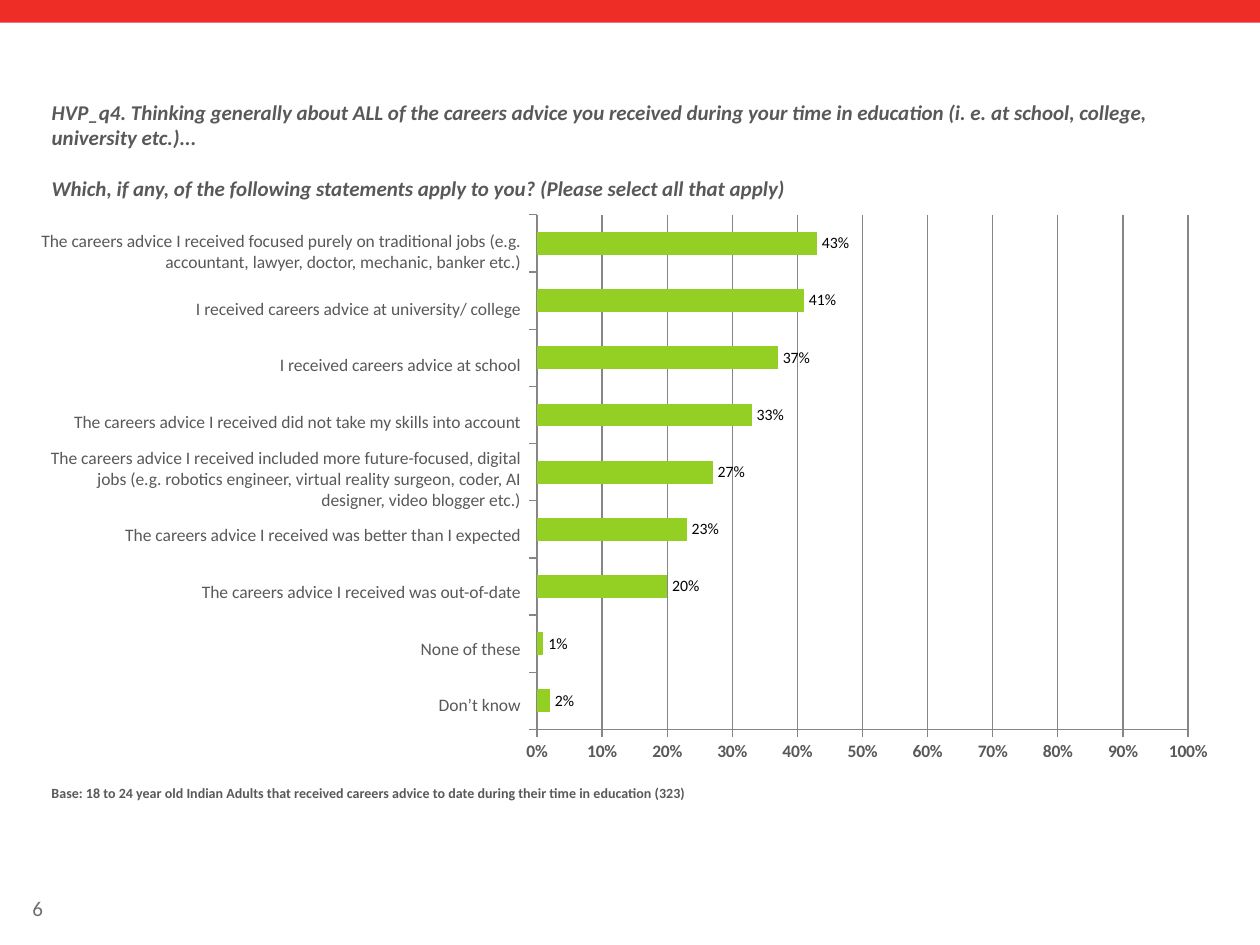
"""Build the careers advice survey slide with its bar chart."""
import pptx
import pptx.chart.data
import pptx.dml.color
import pptx.enum.chart
import pptx.enum.shapes
import pptx.enum.text
import pptx.oxml
import pptx.oxml.ns
import pptx.util

Inches, Pt = pptx.util.Inches, pptx.util.Pt
RGBColor = pptx.dml.color.RGBColor
Anchor = pptx.enum.text.MSO_ANCHOR
Align = pptx.enum.text.PP_ALIGN
Tick = pptx.enum.chart.XL_TICK_MARK
TickLabel = pptx.enum.chart.XL_TICK_LABEL_POSITION

RED = RGBColor(0xEE, 0x2D, 0x27)
GREEN = RGBColor(0x93, 0xD0, 0x23)
DARK = RGBColor(0x59, 0x59, 0x59)
GREY = RGBColor(0x6D, 0x6F, 0x71)
LINE = RGBColor(0x86, 0x86, 0x86)
BLACK = RGBColor(0, 0, 0)
FONT = "Calibri"

QUESTION = [
    "HVP_q4. Thinking generally about ALL of the careers advice you received during your "
    "time in education (i. e. at school, college, university etc.)...",
    "Which, if any, of the following statements apply to you? (Please select all that apply)",
]
ANSWERS = [
    ("The careers advice I received focused purely on traditional jobs "
     "(e.g. accountant, lawyer, doctor, mechanic, banker etc.)", 0.43),
    ("I received careers advice at university/ college", 0.41),
    ("I received careers advice at school", 0.37),
    ("The careers advice I received did not take my skills into account", 0.33),
    ("The careers advice I received included more future-focused, digital jobs "
     "(e.g. robotics engineer, virtual reality surgeon, coder, AI designer, "
     "video blogger etc.)", 0.27),
    ("The careers advice I received was better than I expected", 0.23),
    ("The careers advice I received was out-of-date", 0.20),
    ("None of these", 0.01),
    ("Don’t know", 0.02),
]
BASE = ("Base: 18 to 24 year old Indian Adults that received careers advice to date "
        "during their time in education (323)")
PAGE = "6"

LABEL_TOP, LABEL_STEP = 1.77, 0.45
PLOT = {"x": 0.034, "y": 0.021, "w": 0.918, "h": 0.902}


def style(font, size, color=DARK, bold=False, italic=False):
    font.name, font.size, font.bold, font.italic = FONT, Pt(size), bold, italic
    font.color.rgb = color


def fill_text(sp, lines, size, color=DARK, bold=False, italic=False,
              align=Align.LEFT, anchor=Anchor.TOP):
    tf = sp.text_frame
    tf.word_wrap = True
    tf.auto_size = pptx.enum.text.MSO_AUTO_SIZE.NONE
    tf.vertical_anchor = anchor
    tf.text = "\n".join(lines)
    for p in tf.paragraphs:
        p.alignment = align
        for r in p.runs:
            style(r.font, size, color, bold, italic)
    return tf


def add_text(s, box, text, size, **look):
    sp = s.shapes.add_textbox(*map(Inches, box))
    fill_text(sp, [text], size, **look)


def add_bar_chart(s):
    data = pptx.chart.data.CategoryChartData(number_format="0%")
    data.categories = [str(i + 1) for i in range(len(ANSWERS))]
    data.add_series("Series 1", [value for _, value in reversed(ANSWERS)])
    chart = s.shapes.add_chart(
        pptx.enum.chart.XL_CHART_TYPE.BAR_CLUSTERED,
        Inches(4.07), Inches(1.61), Inches(5.63), Inches(4.53), data).chart
    chart.has_legend = chart.has_title = False
    style(chart.font, 10)

    cat, val = chart.category_axis, chart.value_axis
    cat.tick_label_position = TickLabel.NONE
    val.tick_label_position = TickLabel.LOW
    val.minimum_scale, val.maximum_scale, val.major_unit = 0, 1, 0.1
    val.tick_labels.number_format = "0%"
    val.tick_labels.number_format_is_linked = False
    style(val.tick_labels.font, 10, bold=True)
    val.has_major_gridlines = True
    cat.has_major_gridlines = False
    for axis in (cat, val):
        axis.major_tick_mark, axis.minor_tick_mark = Tick.OUTSIDE, Tick.NONE
    for part in (cat, val, val.major_gridlines):
        part.format.line.color.rgb = LINE
        part.format.line.width = Pt(0.75)

    plot = chart.plots[0]
    plot.gap_width, plot.overlap, plot.vary_by_categories = 150, -10, False
    bars = plot.series[0]
    bars.format.fill.solid()
    bars.format.fill.fore_color.rgb = GREEN
    labels = bars.data_labels
    labels.show_value = True
    labels.number_format, labels.number_format_is_linked = "0%", False
    labels.position = pptx.enum.chart.XL_LABEL_POSITION.OUTSIDE_END
    style(labels.font, 9, BLACK)
    set_plot_area(chart)


def set_plot_area(chart):
    qn = pptx.oxml.ns.qn
    area = chart.plots[0]._element.getparent()
    for old in area.findall(qn("c:layout")):
        area.remove(old)
    modes = "".join(f'<c:{k}Mode val="edge"/>' for k in "xy")
    sizes = "".join(f'<c:{k} val="{v}"/>' for k, v in PLOT.items())
    area.insert(0, pptx.oxml.parse_xml(
        f'<c:layout {pptx.oxml.ns.nsdecls("c")}><c:manualLayout>'
        f'<c:layoutTarget val="inner"/>{modes}{sizes}</c:manualLayout></c:layout>'))


def main():
    prs = pptx.Presentation()
    prs.slide_width, prs.slide_height = Inches(10), Inches(7.5)
    s = prs.slides.add_slide(prs.slide_layouts[5])

    band = s.shapes.add_shape(pptx.enum.shapes.MSO_SHAPE.RECTANGLE,
                              0, 0, prs.slide_width, Inches(0.18))
    band.shadow.inherit = False
    band.fill.solid()
    band.fill.fore_color.rgb = RED
    band.line.fill.background()

    title = s.shapes.title
    title.left, title.top = Inches(0.31), Inches(0.74)
    title.width, title.height = Inches(9.39), Inches(0.88)
    tf = fill_text(title, QUESTION, 12, bold=True, italic=True)
    tf.paragraphs[1].space_before = Pt(14.4)

    add_bar_chart(s)
    for i, (label, _) in enumerate(ANSWERS):
        add_text(s, (0.16, LABEL_TOP + i * LABEL_STEP, 4.07, LABEL_STEP), label, 10,
                 align=Align.RIGHT, anchor=Anchor.MIDDLE)
    add_text(s, (0.31, 6.18, 9.39, 0.43), BASE, 8, bold=True)
    add_text(s, (0.16, 7.06, 0.77, 0.3), PAGE, 12, color=GREY, anchor=Anchor.MIDDLE)
    prs.save("out.pptx")


if __name__ == "__main__":
    main()
